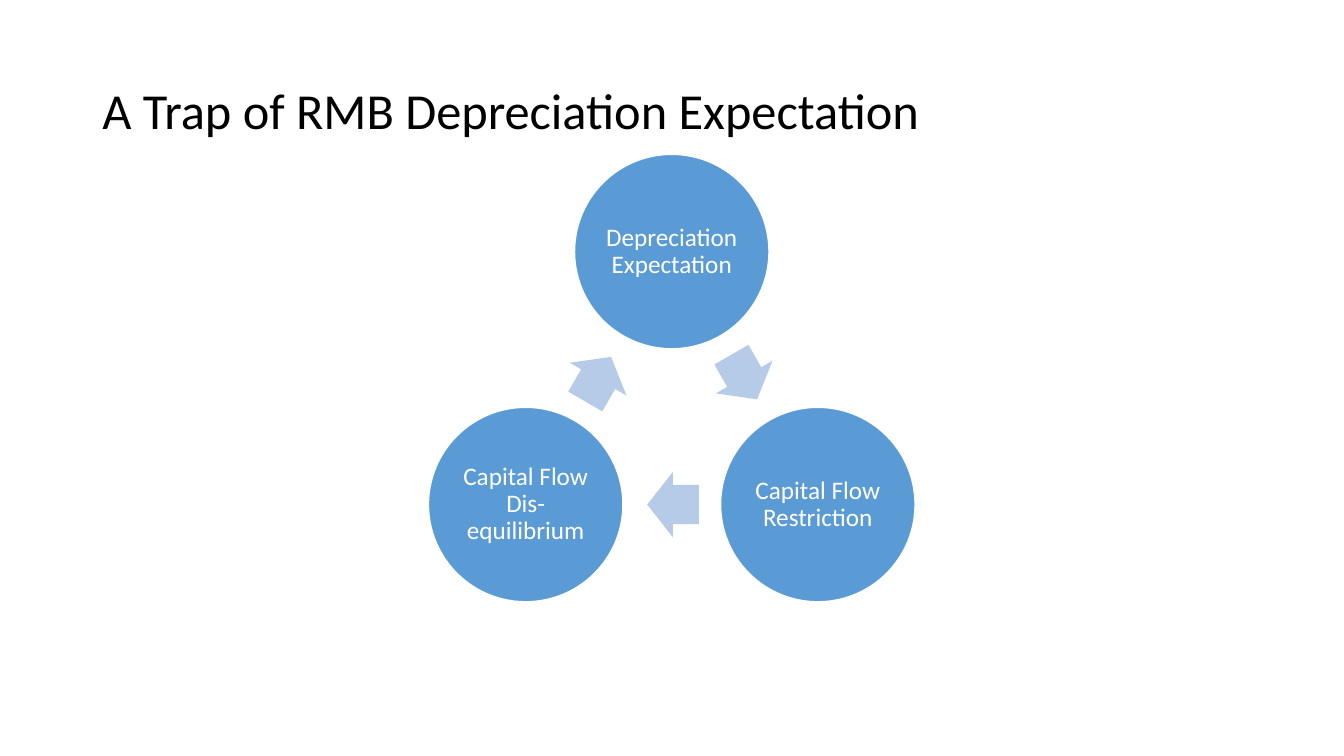
"""Build the slide showing the three-step cycle of RMB depreciation expectation."""
from math import cos, radians, sin

from pptx import Presentation
from pptx.dml.color import RGBColor
from pptx.enum.shapes import MSO_SHAPE
from pptx.enum.text import MSO_ANCHOR, PP_ALIGN
from pptx.util import Cm, Pt

OVAL, ARROW = MSO_SHAPE.OVAL, MSO_SHAPE.RIGHT_ARROW
MIDDLE, LEFT, CENTER = MSO_ANCHOR.MIDDLE, PP_ALIGN.LEFT, PP_ALIGN.CENTER
BLACK = RGBColor(0x00, 0x00, 0x00)
WHITE = RGBColor(0xFF, 0xFF, 0xFF)
BLUE = RGBColor(0x5B, 0x9B, 0xD5)
PALE_BLUE = RGBColor(0xB5, 0xCB, 0xE7)

CENTER_X, CENTER_Y, RADIUS = 16.93, 10.59, 4.25
DIAMETER = 4.9
ARROW_W, ARROW_H, ARROW_SHIFT = 1.3, 1.65, 0.03
STEPS = ["Depreciation Expectation", "Capital Flow Restriction",
         "Capital Flow Dis-equilibrium"]


def write(sp, text, size, color, align):
    tf = sp.text_frame
    tf.word_wrap = True
    tf.vertical_anchor = MIDDLE
    p = tf.paragraphs[0]
    p.alignment = align
    p.line_spacing = 0.9
    r = p.add_run()
    r.text = text
    r.font.name = "Calibri"
    r.font.size = Pt(size)
    r.font.color.rgb = color
    return tf


def add_centered(kind, x, y, w, h, fill):
    sp = s.shapes.add_shape(kind, Cm(x - w / 2), Cm(y - h / 2), Cm(w), Cm(h))
    sp.shadow.inherit = False
    sp.fill.solid()
    sp.fill.fore_color.rgb = fill
    return sp


prs = Presentation()
prs.slide_width, prs.slide_height = Cm(33.87), Cm(19.05)
s = prs.slides.add_slide(prs.slide_layouts[6])

title = s.shapes.add_textbox(Cm(2.33), Cm(1.01), Cm(29.21), Cm(3.68))
write(title, "A Trap of RMB Depreciation Expectation", 36, BLACK, LEFT)

for i, step in enumerate(STEPS):
    angle = radians(120 * i - 90)
    sp = add_centered(OVAL, CENTER_X + RADIUS * cos(angle),
                      CENTER_Y + RADIUS * sin(angle), DIAMETER, DIAMETER, BLUE)
    sp.line.color.rgb = WHITE
    sp.line.width = Pt(1)
    tf = write(sp, step, 18, WHITE, CENTER)
    tf.margin_left = tf.margin_right = tf.margin_top = tf.margin_bottom = Cm(0.08)

    turn = 60 + 120 * i
    middle, heading = radians(turn - 90), radians(turn)
    arrow = add_centered(
        ARROW,
        CENTER_X + RADIUS / 2 * cos(middle) - ARROW_SHIFT * cos(heading),
        CENTER_Y + RADIUS / 2 * sin(middle) - ARROW_SHIFT * sin(heading),
        ARROW_W, ARROW_H, PALE_BLUE)
    arrow.line.fill.background()
    arrow.rotation = turn
    arrow.adjustments[0], arrow.adjustments[1] = 0.6, 0.5

prs.save("out.pptx")
